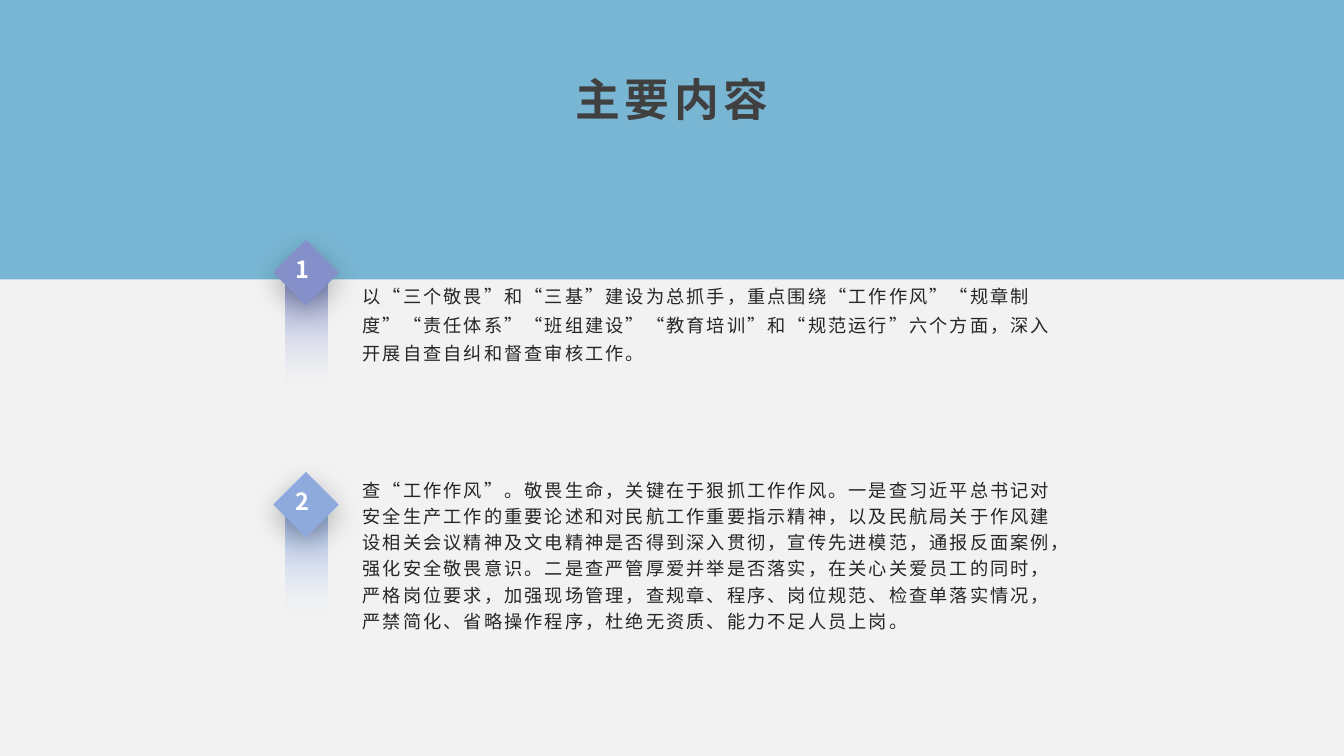
import lxml.etree
import pptx
import pptx.dml.color
import pptx.enum.lang
import pptx.enum.shapes
import pptx.enum.text
import pptx.oxml.ns
import pptx.util

Pt = pptx.util.Pt
qn = pptx.oxml.ns.qn
SHAPES = pptx.enum.shapes.MSO_SHAPE
ANCHOR = pptx.enum.text.MSO_ANCHOR
ALIGN = pptx.enum.text.PP_ALIGN

TITLE = "主要内容"
ITEMS = [
    {"number": "1", "color": "8590CA", "line_spacing": 1.3,
     "text": "以“三个敬畏”和“三基”建设为总抓手，重点围绕“工作作风”“规章制度”“责任体系”"
             "“班组建设”“教育培训”和“规范运行”六个方面，深入开展自查自纠和督查审核工作。"},
    {"number": "2", "color": "8EAADC", "line_spacing": 1.2,
     "text": "查“工作作风”。敬畏生命，关键在于狠抓工作作风。一是查习近平总书记对安全生产工作的"
             "重要论述和对民航工作重要指示精神，以及民航局关于作风建设相关会议精神及文电精神"
             "是否得到深入贯彻，宣传先进模范，通报反面案例，强化安全敬畏意识。二是查严管厚爱"
             "并举是否落实，在关心关爱员工的同时，严格岗位要求，加强现场管理，查规章、程序、"
             "岗位规范、检查单落实情况，严禁简化、省略操作程序，杜绝无资质、能力不足人员上岗。"},
]

THEME = {
    "font": "Noto Sans CJK SC",
    "background": "79B6D3",
    "panel": "F2F2F2",
    "fade": "FFFFFF",
    "shadow": {"color": "000000", "alpha": 27, "blur": 20, "distance": 6},
    "title": {"size": 32, "color": "404040", "bold": True, "spacing": 3},
    "body": {"size": 13, "color": "262626", "bold": False, "spacing": 1.5},
    "number": {"size": 16.8, "color": "FFFFFF", "bold": True, "spacing": 0},
}

# Left, top, width, height in points; item boxes are those of the first item
SLIDE_SIZE = (960, 540)
PANEL_BOX = (0, 199.5, 960, 340.5)
TITLE_BOX = (36, 48.3, 888, 49.6)
BODY_BOX = (252, 164.9, 513.4, 129.6)
STRIP_BOX = (203.8, 198, 30.4, 87.8)
DIAMOND_BOX = (195.2, 171.4, 46.8, 46.8)
NUMBER_BOX = (203.9, 174.2, 22.3, 36)
ITEM_PITCH = 165.6


def rgb(value):
    return pptx.dml.color.RGBColor.from_string(value)


def lengths(box, offset=0):
    left, top, width, height = box
    return [Pt(value) for value in (left, top + offset, width, height)]


def set_values(target, values):
    for name, value in values.items():
        setattr(target, name, value)


def add_plain_shape(slide, kind, box, color=None):
    shape = slide.shapes.add_shape(kind, *box)
    shape.shadow.inherit = False
    shape.line.fill.background()
    if color:
        shape.fill.solid()
        shape.fill.fore_color.rgb = rgb(color)
    return shape


def add_text(slide, box, text, style, frame_format, paragraph_format):
    frame = slide.shapes.add_textbox(*box).text_frame
    set_values(frame, {"word_wrap": True, **frame_format})
    paragraph = frame.paragraphs[0]
    set_values(paragraph, paragraph_format)
    run = paragraph.add_run()
    run.text = text
    set_values(run.font, {
        "name": THEME["font"], "size": Pt(style["size"]), "bold": style["bold"],
        "language_id": pptx.enum.lang.MSO_LANGUAGE_ID.SIMPLIFIED_CHINESE})
    run.font.color.rgb = rgb(style["color"])
    properties = run._r.get_or_add_rPr()
    properties.set("spc", str(round(style["spacing"] * 100)))
    lxml.etree.SubElement(properties, qn("a:ea"), typeface=THEME["font"])


def add_color_alpha(color_element, percent):
    lxml.etree.SubElement(color_element, qn("a:alpha"), val=str(percent * 1000))


def add_fading_strip(slide, box, color):
    """Add a bar that runs from full colour at the top to clear at the bottom."""
    strip = add_plain_shape(slide, SHAPES.RECTANGLE, box)
    strip.fill.gradient()
    strip.fill.gradient_angle = 90
    for stop, value in zip(strip.fill.gradient_stops, (THEME["fade"], color)):
        stop.color.rgb = rgb(value)
    add_color_alpha(strip._element.spPr.find(".//" + qn("a:srgbClr")), 0)


def add_shadow(shape):
    shadow = THEME["shadow"]
    effects = shape._element.spPr.find(qn("a:effectLst"))
    outer = lxml.etree.SubElement(
        effects, qn("a:outerShdw"), blurRad=str(Pt(shadow["blur"])),
        dist=str(Pt(shadow["distance"])), dir="5400000", algn="t", rotWithShape="0")
    color = lxml.etree.SubElement(outer, qn("a:srgbClr"), val=shadow["color"])
    add_color_alpha(color, shadow["alpha"])


def add_item(slide, item, offset):
    middle = {"vertical_anchor": ANCHOR.MIDDLE}
    add_text(slide, lengths(BODY_BOX, offset), item["text"], THEME["body"],
             middle, {"line_spacing": item["line_spacing"]})
    add_fading_strip(slide, lengths(STRIP_BOX, offset), item["color"])
    diamond = add_plain_shape(slide, SHAPES.FLOWCHART_DECISION,
                              lengths(DIAMOND_BOX, offset), item["color"])
    add_shadow(diamond)
    add_text(slide, lengths(NUMBER_BOX, offset), item["number"], THEME["number"],
             middle, {})


def main():
    presentation = pptx.Presentation()
    presentation.slide_width, presentation.slide_height = map(Pt, SLIDE_SIZE)
    slide = presentation.slides.add_slide(presentation.slide_layouts[6])
    slide.background.fill.solid()
    slide.background.fill.fore_color.rgb = rgb(THEME["background"])
    add_plain_shape(slide, SHAPES.RECTANGLE, lengths(PANEL_BOX), THEME["panel"])
    title_insets = {"margin_left": Pt(5.8), "margin_right": Pt(5.8),
                    "margin_top": Pt(2.9), "margin_bottom": Pt(2.9)}
    add_text(slide, lengths(TITLE_BOX), TITLE, THEME["title"], title_insets,
             {"alignment": ALIGN.CENTER, "space_after": Pt(8)})
    for index, item in enumerate(ITEMS):
        add_item(slide, item, index * ITEM_PITCH)
    presentation.save("out.pptx")


if __name__ == "__main__":
    main()
